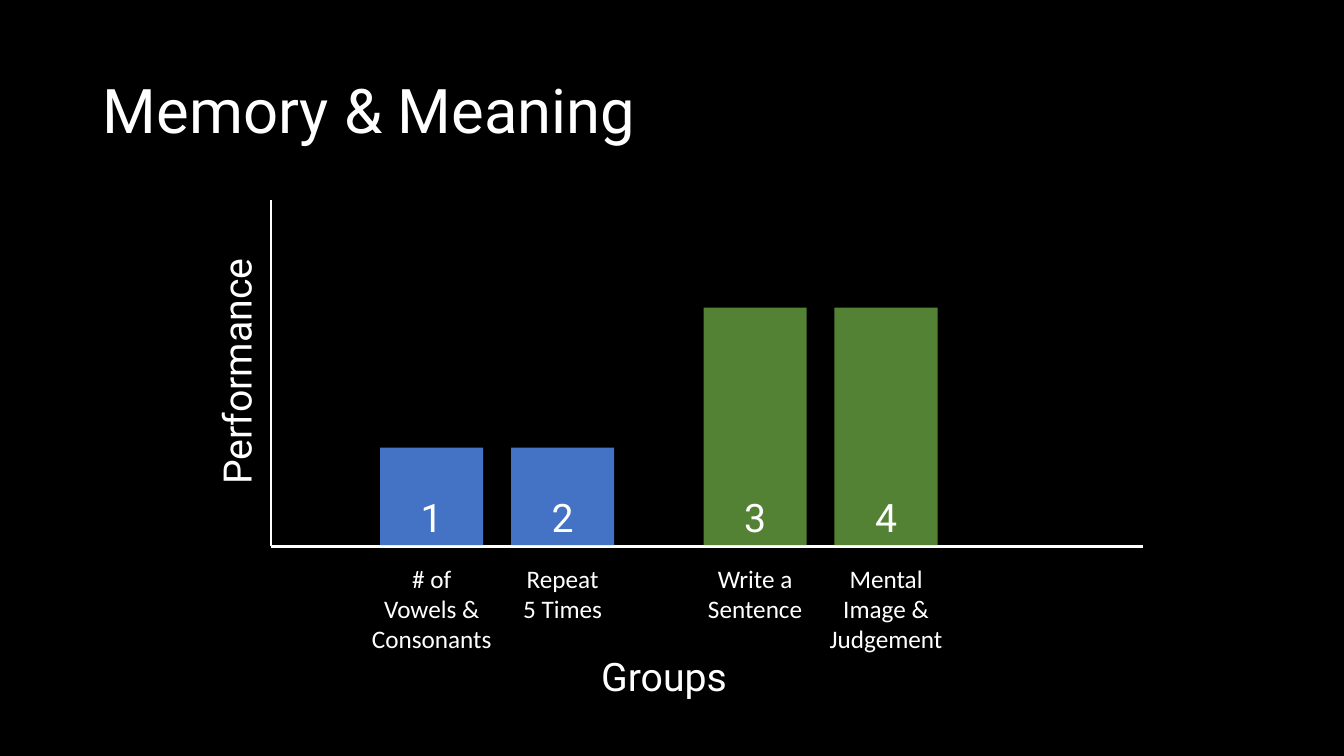
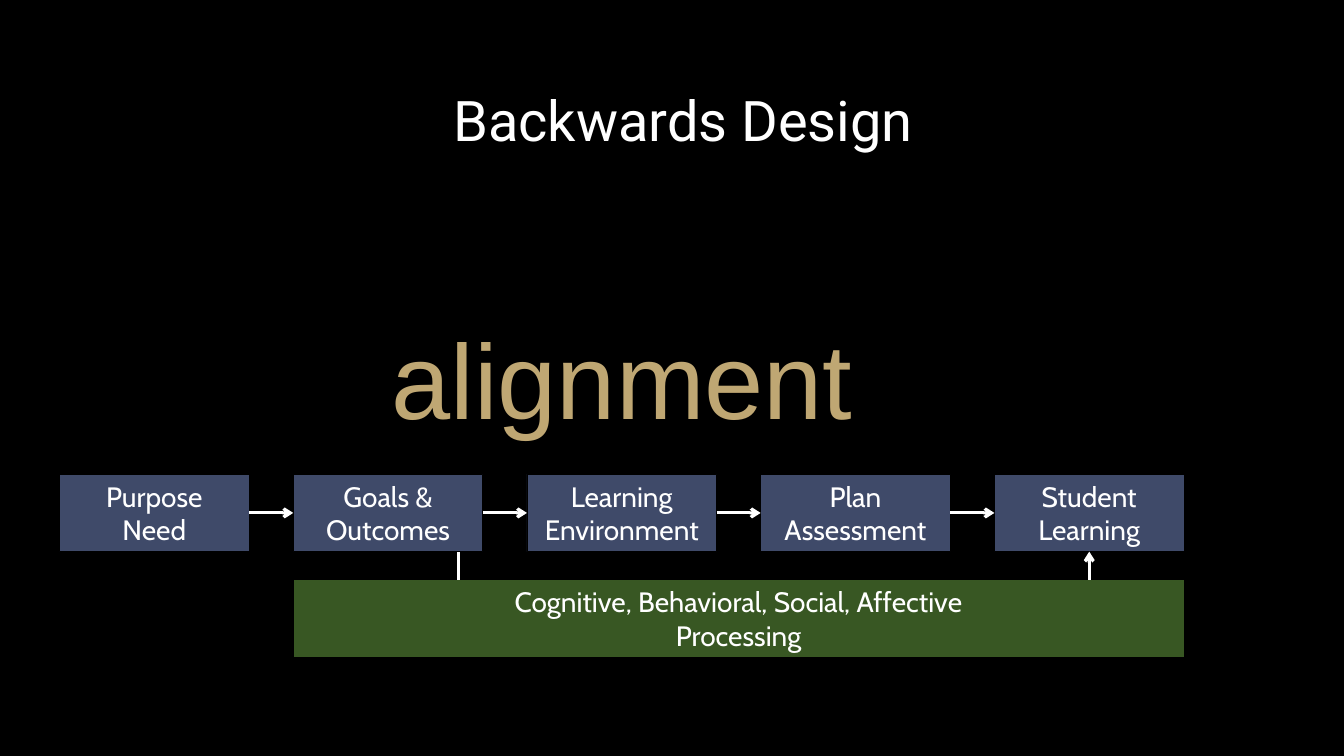
from lxml import etree
from pptx import Presentation
from pptx import util as u
from pptx.dml.color import RGBColor
from pptx.enum import shapes, text
from pptx.oxml import ns

COLORS = {
    "black": "000000",
    "white": "FFFFFF",
    "blue": "4472C4",
    "green": "548235",
    "navy": "3F4A69",
    "forest": "385723",
    "gold": "FFDF9A",
}
TOP, LEFT, BOTTOM, RIGHT = range(4)


def rgb(name):
    return RGBColor.from_string(COLORS[name])


def cm(*values):
    return [u.Cm(v) for v in values]


class Deck:
    """Hold the shared style and the current slide."""

    def __init__(self):
        self.prs = Presentation()
        self.prs.slide_width, self.prs.slide_height = cm(33.87, 19.05)
        fill = self.prs.slide_master.background.fill
        fill.solid()
        fill.fore_color.rgb = rgb("black")
        self.s = None

    def new_slide(self, title, box, size, align):
        self.s = self.prs.slides.add_slide(self.prs.slide_layouts[5])
        sp = self.s.shapes.title
        sp.left, sp.top, sp.width, sp.height = cm(*box)
        self.set_text(sp, [title], "Roboto", size, align=align,
                      anchor=text.MSO_ANCHOR.MIDDLE)
        sp.text_frame.paragraphs[0].line_spacing = 0.9

    def set_text(self, sp, lines, font, size, color="white",
                 align=text.PP_ALIGN.CENTER, anchor=text.MSO_ANCHOR.TOP, alpha=None):
        tf = sp.text_frame
        tf.word_wrap = True
        tf.auto_size = text.MSO_AUTO_SIZE.NONE
        tf.vertical_anchor = anchor
        for i, line in enumerate(lines):
            p = tf.add_paragraph() if i else tf.paragraphs[0]
            p.alignment = align
            r = p.add_run()
            r.text = line
            r.font.name = font
            r.font.size = u.Pt(size)
            r.font.color.rgb = rgb(color)
            if alpha is not None:
                clr = r._r.find(".//" + ns.qn("a:srgbClr"))
                etree.SubElement(clr, ns.qn("a:alpha"), val=str(alpha * 1000))

    def label(self, box, lines, font, size, rotation=0, inset=0.25, **style):
        sp = self.s.shapes.add_textbox(*cm(*box))
        sp.rotation = rotation
        sp.text_frame.margin_left = sp.text_frame.margin_right = u.Cm(inset)
        self.set_text(sp, lines, font, size, **style)

    def block(self, box, fill, lines, font, size, outline=None,
              anchor=text.MSO_ANCHOR.MIDDLE):
        sp = self.s.shapes.add_shape(shapes.MSO_SHAPE.RECTANGLE, *cm(*box))
        sp.shadow.inherit = False
        sp.fill.solid()
        sp.fill.fore_color.rgb = rgb(fill)
        if outline:
            sp.line.color.rgb = rgb(outline)
            sp.line.width = u.Pt(0.5)
        else:
            sp.line.fill.background()
        self.set_text(sp, lines, font, size, anchor=anchor)
        return sp

    def line(self, start, end, width, arrow=False, begin_at=None, end_at=None):
        c = self.s.shapes.add_connector(shapes.MSO_CONNECTOR.STRAIGHT,
                                        *cm(*start, *end))
        if begin_at:
            c.begin_connect(*begin_at)
        if end_at:
            c.end_connect(*end_at)
        c.line.color.rgb = rgb("white")
        c.line.width = u.Pt(width)
        if arrow:
            ln = c._element.spPr.find(ns.qn("a:ln"))
            etree.SubElement(ln, ns.qn("a:tailEnd"), type="arrow")
        etree.SubElement(c._element.spPr, ns.qn("a:effectLst"))


def memory_slide(deck):
    deck.new_slide("Memory & Meaning", (2.34, 1.02, 29.21, 3.68), 44,
                   text.PP_ALIGN.LEFT)
    axis_x, axis_y = 6.83, 13.77
    deck.line((axis_x, axis_y), (28.8, axis_y), 2)
    deck.line((axis_x, axis_y), (axis_x, 5.05), 2)

    bar_w, pitch = 2.6, 3.3
    groups = [
        (9.58, 2.46, "blue", [["# of", "Vowels &", "Consonants"],
                              ["Repeat", "5 Times"]]),
        (17.73, 5.99, "green", [["Write a", "Sentence"],
                                ["Mental", "Image &", "Judgement"]]),
    ]
    number = 0
    for left, height, color, tasks in groups:
        for i, task in enumerate(tasks):
            number += 1
            x = left + i * pitch
            deck.block((x, axis_y - 0.03 - height, bar_w, height), color,
                       [str(number)], "Roboto", 28, anchor=text.MSO_ANCHOR.BOTTOM)
            deck.label((x - (pitch - bar_w) / 2, 14.07, pitch, 2.57), task,
                       "Calibri", 18, inset=0)

    deck.label((1.6, 8.64, 8.71, 1.45), ["Performance"], "Roboto", 28, rotation=270)
    deck.label((axis_x, 16.31, 19.81, 1.45), ["Groups"], "Roboto", 28)


def design_slide(deck):
    deck.new_slide("Backwards Design", (0.28, 2.13, 33.87, 1.96), 40,
                   text.PP_ALIGN.CENTER)
    left, top, step_w, step_h, pitch = 1.5, 11.95, 4.78, 1.95, 5.89
    deck.label((left, 7.77, 28.35, 3.5), ["alignment"], "Arial", 76,
               color="gold", alpha=75)

    names = [("Purpose", "Need"), ("Goals &", "Outcomes"),
             ("Learning", "Environment"), ("Plan", "Assessment"),
             ("Student", "Learning")]
    steps = [deck.block((left + i * pitch, top, step_w, step_h), "navy", lines,
                        "Cabin", 20, outline="black")
             for i, lines in enumerate(names)]
    for a, b in zip(steps, steps[1:]):
        deck.line((0, 0), (0, 0), 2.25, arrow=True,
                  begin_at=(a, RIGHT), end_at=(b, LEFT))

    bar_top = 14.61
    deck.block((left + pitch, bar_top, 3 * pitch + step_w, step_h), "forest",
               ["Cognitive, Behavioral, Social, Affective", "Processing"],
               "Cabin", 20, outline="black")
    deck.line((11.56, bar_top), (11.56, top + step_h), 2.25)
    student_x = left + 4 * pitch + step_w / 2
    deck.line((student_x, bar_top), (student_x, top + step_h), 2.25, arrow=True,
              end_at=(steps[-1], BOTTOM))


def main():
    deck = Deck()
    memory_slide(deck)
    design_slide(deck)
    deck.prs.save("out.pptx")


if __name__ == "__main__":
    main()
